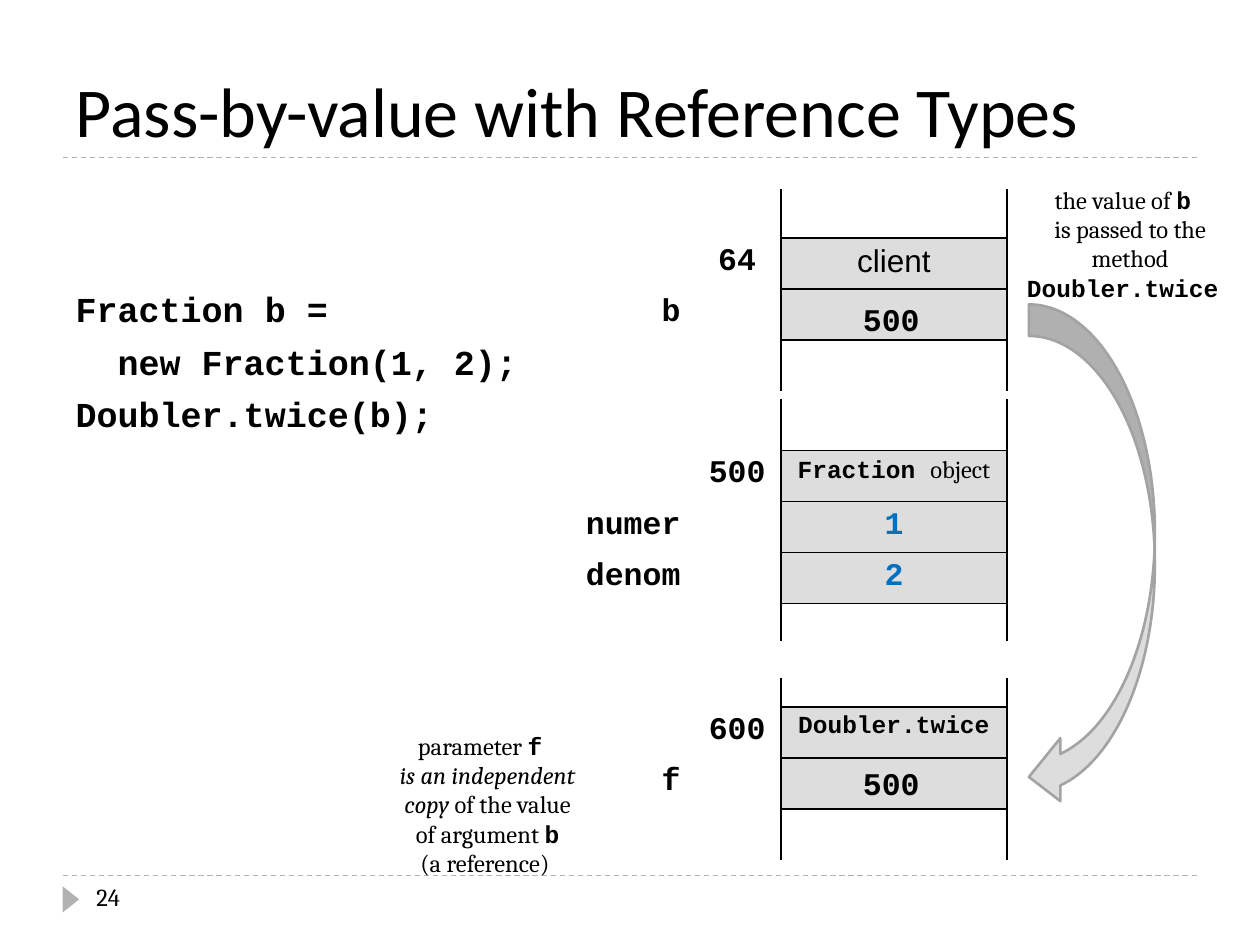
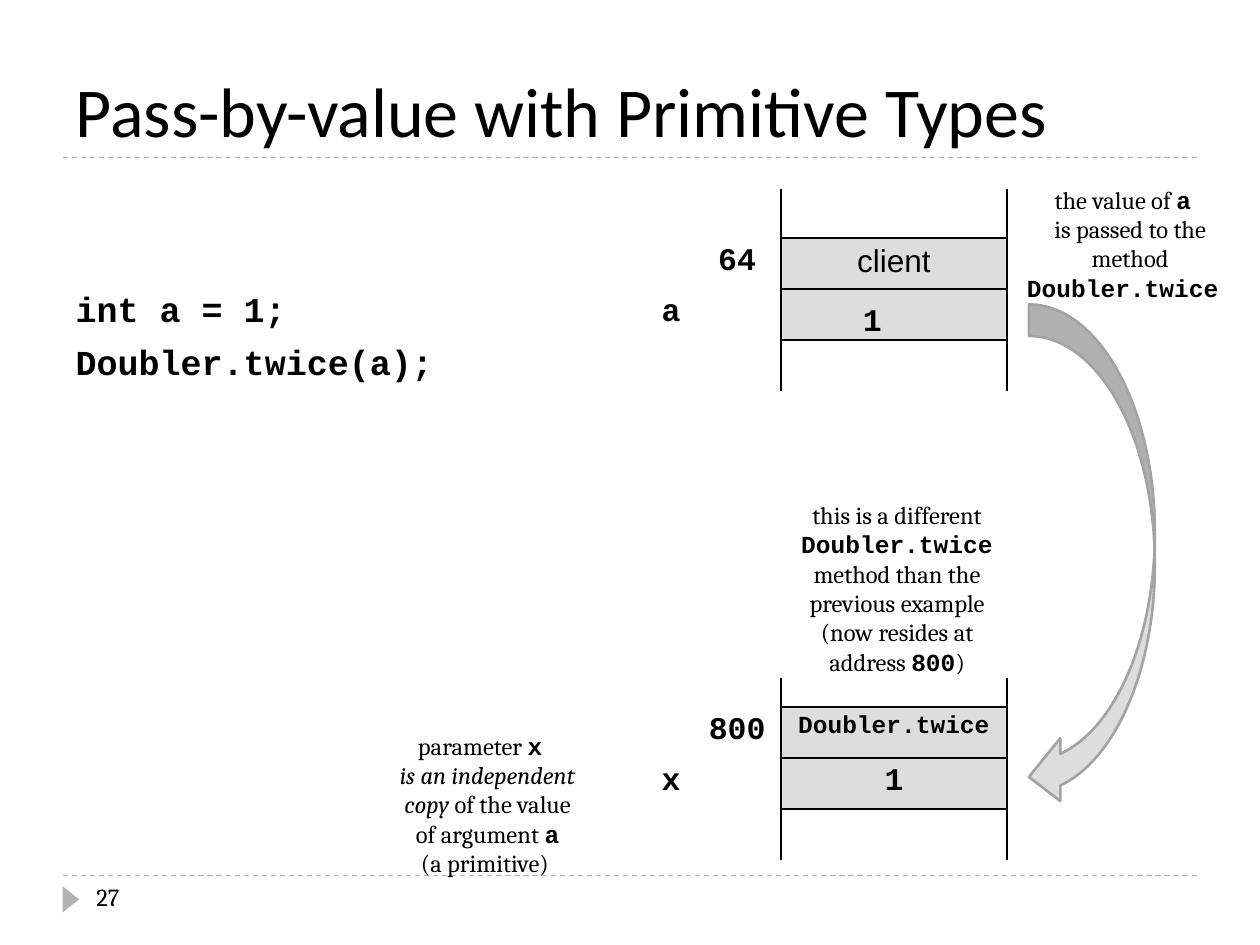
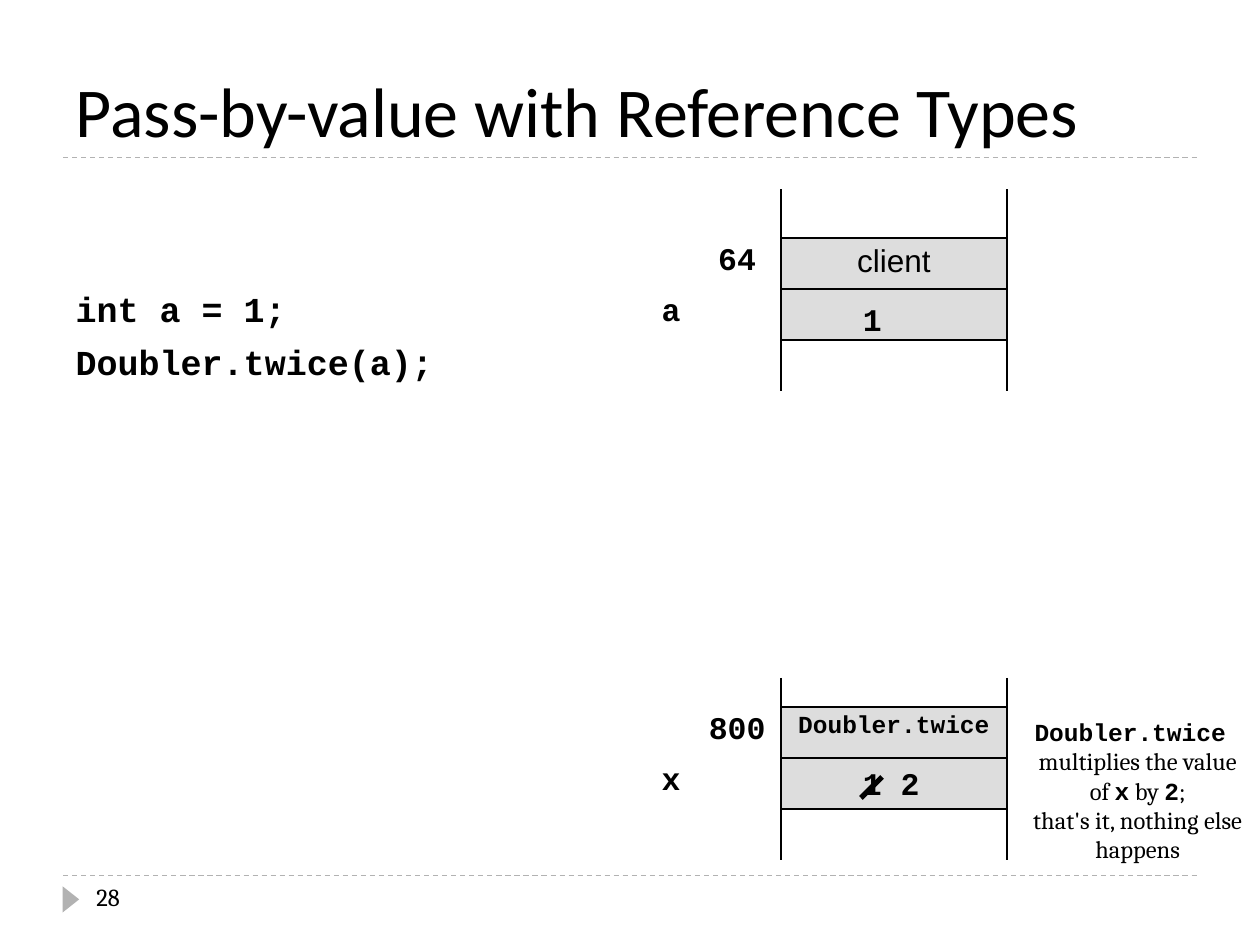
from typing import NamedTuple

from lxml.etree import SubElement
from pptx import Presentation
from pptx.dml.color import RGBColor
from pptx.enum.dml import MSO_LINE_DASH_STYLE as Dash
from pptx.enum.shapes import MSO_CONNECTOR as Connector, MSO_SHAPE as Preset
from pptx.enum.text import MSO_ANCHOR as Anchor, MSO_AUTO_SIZE as AutoSize, PP_ALIGN as Align
from pptx.oxml.ns import qn
from pptx.util import Pt

BLACK = RGBColor(0x00, 0x00, 0x00)
BLUE = RGBColor(0x00, 0x70, 0xC0)
RULE_GREY = RGBColor(0xB2, 0xB2, 0xB2)
CELL_GREY = RGBColor(0xDD, 0xDD, 0xDD)
ARROW_EDGE = RGBColor(0xA3, 0xA3, 0xA3)

NO_TABLE_STYLE = "{2D5ABB26-0587-4C30-8999-92F81FD0307C}"
MEMORY_COLUMNS = (84, 50.4, 128.9)
MEMORY_LEFT = 312
ROW_HEIGHT = 29.2


class Style(NamedTuple):
    font: str
    size: float
    bold: bool = False
    italic: bool = False
    color: RGBColor = BLACK


TITLE = Style("Calibri", 40)
PROSE = Style("Cambria", 14)
EMPHASIS = Style("Cambria", 14, italic=True)
CODE = Style("Courier New", 14, bold=True)
LISTING = Style("Courier New", 20, bold=True)
VALUE = Style("Courier New", 18, bold=True)
FIELD = VALUE._replace(color=BLUE)
CLIENT = Style("Arial", 18)


def place(box):
    return [Pt(length) for length in box]


def add_spans(para, spans, align=Align.LEFT):
    para.alignment = align
    for text, style in spans:
        span = para.add_run()
        span.text = text
        font = span.font
        font.name, font.size = style.font, Pt(style.size)
        font.bold, font.italic = style.bold, style.italic
        font.color.rgb = style.color


def fill_paragraphs(frame, lines, align=Align.LEFT):
    for index, spans in enumerate(lines):
        para = frame.add_paragraph() if index else frame.paragraphs[0]
        add_spans(para, spans, align)


def add_text(page, box, lines, align=Align.LEFT, wrap=True):
    frame = page.shapes.add_textbox(*place(box)).text_frame
    frame.word_wrap = wrap
    fill_paragraphs(frame, lines, align)


def add_line(page, ends, color, width, dash=None):
    line = page.shapes.add_connector(Connector.STRAIGHT, *place(ends))
    line.line.color.rgb, line.line.width = color, Pt(width)
    if dash:
        line.line.dash_style = dash
    SubElement(line.element.spPr, qn("a:effectLst"))


def add_footer(page, box, number):
    left, top, width, height = box
    add_line(page, (left, top, left + width, top), RULE_GREY, 0.75, Dash.DASH)
    marker = page.shapes.add_shape(
        Preset.ISOSCELES_TRIANGLE, *place((left - 3, top + 8.8, 15, 9.5)))
    marker.rotation = 90
    marker.shadow.inherit = False
    marker.fill.solid()
    marker.fill.fore_color.rgb = RULE_GREY
    marker.line.fill.background()
    add_text(page, (left + 12, top, 156, height), [[(str(number), PROSE)]])


def set_title(page, box, text):
    left, top, width, height = box
    title = page.shapes.title
    title.left, title.top, title.width, title.height = place(box)
    frame = title.text_frame
    frame.vertical_anchor = Anchor.BOTTOM
    frame.auto_size = AutoSize.NONE
    add_spans(frame.paragraphs[0], [(text, TITLE)])
    bottom = top + height
    add_line(page, (left, bottom, left + width, bottom), RULE_GREY, 0.75, Dash.DASH)


def set_listing(page, box, code):
    """Fill the body with (indent in characters, code line) pairs."""
    body = page.placeholders[1]
    body.left, body.top, body.width, body.height = place(box)
    frame = body.text_frame
    frame.auto_size = AutoSize.NONE
    frame.margin_top = Pt(68.4)
    fill_paragraphs(frame, [[(line, LISTING)] for _, line in code])
    for index, (para, (indent, _)) in enumerate(zip(frame.paragraphs, code)):
        para.space_before = Pt(6 if index else 0)
        props = para._p.get_or_add_pPr()
        props.set("marL", str(Pt(indent * 12)))
        props.set("indent", "0")
        SubElement(props, qn("a:buNone"))


def set_borders(cell, sides):
    props = cell._tc.get_or_add_tcPr()
    for index, side in enumerate(sides):
        edge = SubElement(props, qn(f"a:ln{side}"), w=str(Pt(1)))
        fill = SubElement(edge, qn("a:solidFill"))
        SubElement(fill, qn("a:srgbClr"), val=str(BLACK))
        props.insert(index, edge)


def add_memory(page, top, address, rows, first=ROW_HEIGHT, last=ROW_HEIGHT):
    """Draw a memory block; rows are (variable name, content spans)."""
    heights = [first] + [ROW_HEIGHT] * len(rows) + [last]
    box = (MEMORY_LEFT, top, sum(MEMORY_COLUMNS), sum(heights))
    table = page.shapes.add_table(len(heights), 3, *place(box)).table
    table.first_row = table.horz_banding = False
    table._tbl.tblPr.find(qn("a:tableStyleId")).text = NO_TABLE_STYLE
    for column, width in zip(table.columns, MEMORY_COLUMNS):
        column.width = Pt(width)
    contents = {}
    for index, (name, spans) in enumerate(rows, 1):
        contents[index, 0] = [(name, VALUE)] if name else []
        contents[index, 2] = spans
    contents[1, 1] = [(address, VALUE)]
    end = len(heights) - 1
    for r, height in enumerate(heights):
        table.rows[r].height = Pt(height)
        for c in range(3):
            cell = table.cell(r, c)
            para = cell.text_frame.paragraphs[0]
            spans = contents.get((r, c), [])
            add_spans(para, spans, Align.CENTER if c else Align.RIGHT)
            if not spans:
                SubElement(para._p, qn("a:endParaRPr"), sz="600")
            if c == 2 and 0 < r < end:
                cell.fill.solid()
                cell.fill.fore_color.rgb = CELL_GREY
            else:
                cell.fill.background()
            if c == 2:
                set_borders(cell, "LR" + "T" * (r > 0) + "B" * (r < end))


def add_client(page, name, value):
    add_memory(page, 108, "64", [(None, [("client", CLIENT)]), (name, [])], first=28)
    add_value(page, 168, value)


def add_fraction(page):
    add_memory(page, 228.2, "500", [
        (None, [("Fraction ", CODE), ("object", PROSE)]),
        ("numer", [("1", FIELD)]),
        ("denom", [("2", FIELD)]),
    ], last=21.4)


def add_method(page, address, name, spans=()):
    add_memory(page, 387.4, address,
               [(None, [("Doubler.twice", CODE)]), (name, spans)], first=16.6)


def add_value(page, top, text):
    add_text(page, (486, top, 46.8, 29), [[(text, VALUE)]], wrap=False)


def add_note(page, box, lines):
    add_text(page, box, lines, Align.CENTER)


def add_passing(page, argument, parameter, kind):
    """Explain how the argument is passed, with an arrow to the parameter."""
    add_note(page, (208.8, 414, 139.7, 92), [
        [("parameter ", PROSE), (f"{parameter} ", CODE)],
        [("is an independent copy", EMPHASIS), (" of the value", PROSE)],
        [("of argument ", PROSE), (argument, CODE)],
        [(f"(a {kind}) ", PROSE)],
    ])
    add_note(page, (576, 102, 139.7, 75), [
        [("the value of ", PROSE), (f"{argument} ", CODE)],
        [("is passed to the", PROSE)],
        [("method ", PROSE), ("Doubler.twice ", CODE)],
    ])
    arrow = page.shapes.add_shape(Preset.CURVED_RIGHT_ARROW, *place((588, 174, 72, 288)))
    arrow.element.spPr.find(qn("a:xfrm")).set("flipH", "1")
    arrow.shadow.inherit = False
    arrow.fill.solid()
    arrow.fill.fore_color.rgb = CELL_GREY
    arrow.line.color.rgb, arrow.line.width = ARROW_EDGE, Pt(1.5)


def add_page(deck, title, number, code):
    page = deck.slides.add_slide(deck.slide_layouts[1])
    add_footer(page, (36, 500.4, 648, 29), number)
    set_title(page, (36, 12, 648, 78), title)
    set_listing(page, (36, 96, 648, 389), code)
    return page


def add_reference_page(deck):
    code = [(0, "Fraction b ="), (2, "new Fraction(1, 2);"), (0, "Doubler.twice(b);")]
    page = add_page(deck, "Pass-by-value with Reference Types", 24, code)
    add_client(page, "b", "500")
    add_fraction(page)
    add_method(page, "600", "f")
    add_value(page, 433, "500")
    add_passing(page, "b", "f", "reference")


def add_primitive_page(deck, title, number):
    code = [(0, "int a = 1;"), (0, "Doubler.twice(a);")]
    page = add_page(deck, title, number, code)
    add_client(page, "a", "1")
    return page


def add_call_page(deck):
    page = add_primitive_page(deck, "Pass-by-value with Primitive Types", 27)
    add_method(page, "800", "x", [("1", VALUE)])
    add_passing(page, "a", "x", "primitive")
    add_note(page, (442.8, 282, 139.7, 109), [[
        ("this is a different ", PROSE), ("Doubler.twice", CODE),
        (" method than the previous example (now resides at address ", PROSE),
        ("800", CODE), (")", PROSE),
    ]])


def add_result_page(deck):
    page = add_primitive_page(deck, "Pass-by-value with Reference Types", 28)
    add_method(page, "800", "x")
    add_value(page, 433, "1 2")
    add_note(page, (580.3, 406, 139.7, 92), [
        [("Doubler.twice ", CODE)],
        [("multiplies the value of ", PROSE), ("x", CODE), (" by ", PROSE),
         ("2", CODE), (";", PROSE)],
        [("that's it, nothing else happens", PROSE)],
    ])
    add_line(page, (504, 444, 492, 456), BLACK, 3)


def main():
    deck = Presentation()
    deck.slide_width, deck.slide_height = Pt(720), Pt(540)
    add_reference_page(deck)
    add_call_page(deck)
    add_result_page(deck)
    deck.save("out.pptx")


if __name__ == "__main__":
    main()
